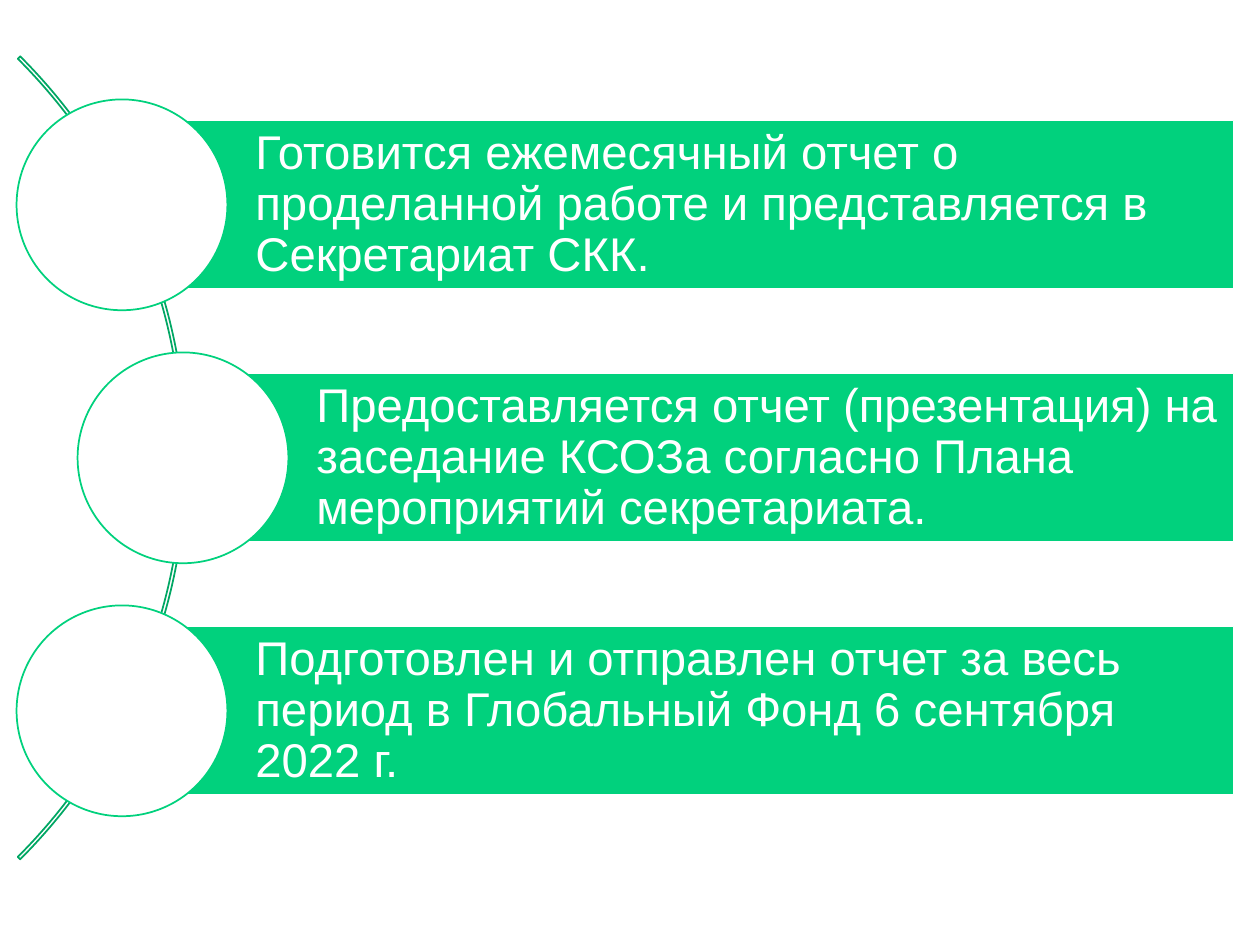
from dataclasses import dataclass

from pptx import Presentation
from pptx.dml.color import RGBColor
from pptx.enum.shapes import MSO_SHAPE
from pptx.enum.text import MSO_ANCHOR, PP_ALIGN
from pptx.util import Cm, Pt

REPORTS = [
    ("Готовится ежемесячный отчет о проделанной работе и представляется в Секретариат СКК.", 2.46),
    ("Предоставляется отчет (презентация) на заседание КСОЗа согласно Плана мероприятий секретариата.", 3.69),
    ("Подготовлен и отправлен отчет за весь период в Глобальный Фонд 6 сентября 2022 г.", 2.46),
]


@dataclass(frozen=True)
class Theme:
    green: RGBColor = RGBColor(0x01, 0xD1, 0x7D)
    dark_green: RGBColor = RGBColor(0x01, 0xA7, 0x64)
    white: RGBColor = RGBColor(0xFF, 0xFF, 0xFF)
    font: str = "Arial"
    text_size: Pt = Pt(27)
    line_width: Pt = Pt(1)


THEME = Theme()
MIDDLE_Y = 9.23
ROW_PITCH = 5.1
BAR_RIGHT = 24.87
BAR_HEIGHT = 3.4
CIRCLE_SIZE = 4.25
ARC_SIZE = 22.89
ARC_LEFT = -19.13
TEXT_INDENT = 2.69
TEXT_MARGIN = 0.18


def add_outlined(page, kind, left, center_y, width, height, fill, line):
    """Add a preset shape centred vertically on center_y, in centimetres."""
    shape = page.shapes.add_shape(kind, Cm(left), Cm(center_y - height / 2), Cm(width), Cm(height))
    shape.shadow.inherit = False
    if fill is None:
        shape.fill.background()
    else:
        shape.fill.solid()
        shape.fill.fore_color.rgb = fill
    shape.line.color.rgb = line
    shape.line.width = THEME.line_width
    return shape


def write_report(bar, text):
    """Write white left-aligned text to the right of the circle."""
    frame = bar.text_frame
    frame.word_wrap = True
    frame.vertical_anchor = MSO_ANCHOR.MIDDLE
    frame.margin_left = Cm(TEXT_INDENT)
    frame.margin_right = frame.margin_top = frame.margin_bottom = Cm(TEXT_MARGIN)
    para = frame.paragraphs[0]
    para.text = text
    para.alignment = PP_ALIGN.LEFT
    para.line_spacing = 0.9
    para.font.name = THEME.font
    para.font.size = THEME.text_size
    para.font.color.rgb = THEME.white


def main():
    """Build the slide with three reports along an arc."""
    deck = Presentation()
    deck.slide_width, deck.slide_height = Cm(25.4), Cm(19.05)
    page = deck.slides.add_slide(deck.slide_layouts[6])

    arc = add_outlined(page, MSO_SHAPE.BLOCK_ARC, ARC_LEFT, MIDDLE_Y, ARC_SIZE, ARC_SIZE,
                       None, THEME.dark_green)
    for index, value in enumerate((189, 27, 0.003)):
        arc.adjustments[index] = value

    for row, (text, center_x) in enumerate(REPORTS):
        center_y = MIDDLE_Y + (row - (len(REPORTS) - 1) / 2) * ROW_PITCH
        bar = add_outlined(page, MSO_SHAPE.RECTANGLE, center_x, center_y,
                           BAR_RIGHT - center_x, BAR_HEIGHT, THEME.green, THEME.white)
        write_report(bar, text)
        add_outlined(page, MSO_SHAPE.OVAL, center_x - CIRCLE_SIZE / 2, center_y,
                     CIRCLE_SIZE, CIRCLE_SIZE, THEME.white, THEME.green)

    deck.save("out.pptx")


if __name__ == "__main__":
    main()
